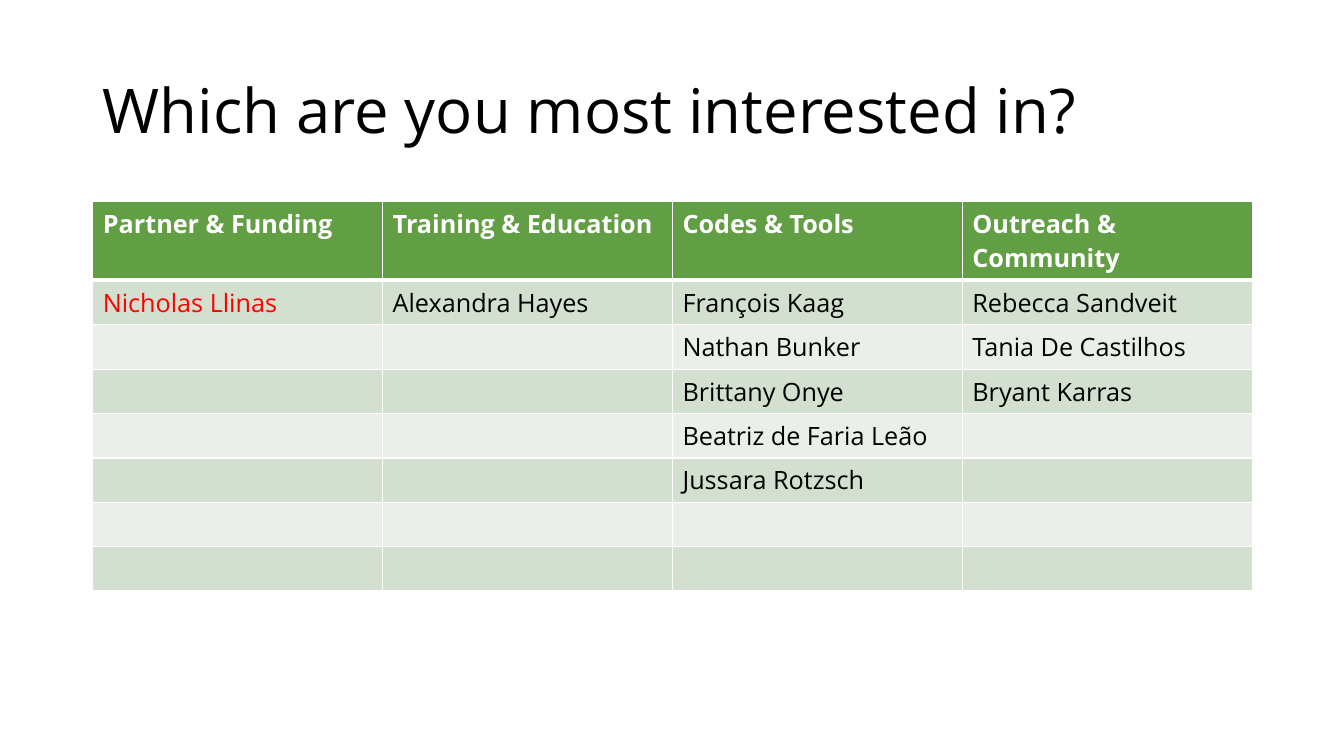
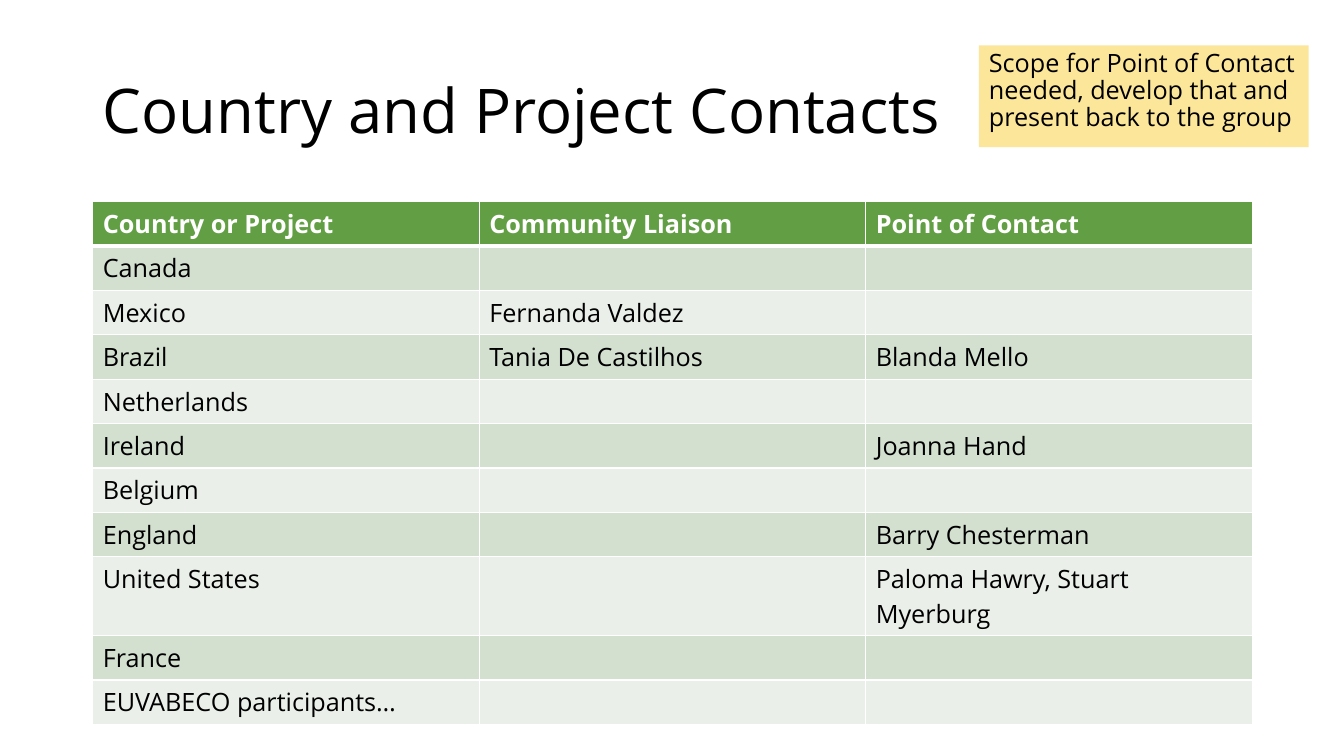
from pptx import Presentation
from pptx.dml.color import RGBColor
from pptx.enum.shapes import MSO_SHAPE
from pptx.enum.text import MSO_ANCHOR, PP_ALIGN
from pptx.oxml.ns import qn
from pptx.util import Inches, Pt
from lxml.etree import SubElement

BLACK = RGBColor(0x00, 0x00, 0x00)
WHITE = RGBColor(0xFF, 0xFF, 0xFF)
RED = RGBColor(0xFF, 0x00, 0x00)
GREEN = RGBColor(0x62, 0x9F, 0x44)
BAND_DARK = RGBColor(0xD3, 0xDF, 0xCF)
BAND_LIGHT = RGBColor(0xEA, 0xF0, 0xE9)
YELLOW = RGBColor(0xFB, 0xE6, 0x9A)

FONT = "Open Sans"
LEFT, WIDTH = 0.92, 11.5
ROW_HEIGHT = 0.44


def write(tf, text, size=18, color=BLACK, bold=False, spacing=None):
    """Put one formatted, left-aligned paragraph into a text frame."""
    p = tf.paragraphs[0]
    p.text = text
    p.alignment = PP_ALIGN.LEFT
    if spacing:
        p.line_spacing = spacing
    for r in p.runs:
        r.font.name = FONT
        r.font.size = Pt(size)
        r.font.bold = bold
        r.font.color.rgb = color


def set_borders(cell, color, bottom=1):
    """Draw 1 pt cell borders, with a bottom border of its own width."""
    tc_pr = cell._tc.get_or_add_tcPr()
    for side, width in (("L", 1), ("R", 1), ("T", 1), ("B", bottom)):
        ln = SubElement(tc_pr, qn(f"a:ln{side}"), w=str(Pt(width)))
        fill = SubElement(ln, qn("a:solidFill"))
        SubElement(fill, qn("a:srgbClr"), val=str(color))


class Deck:
    def __init__(self):
        self.prs = Presentation()
        self.prs.slide_width = Inches(13.33)
        self.prs.slide_height = Inches(7.5)
        self.slide = None

    def add_slide(self, title):
        self.slide = self.prs.slides.add_slide(self.prs.slide_layouts[5])
        sp = self.slide.shapes.title
        sp.left, sp.top = Inches(LEFT), Inches(0.4)
        sp.width, sp.height = Inches(WIDTH), Inches(1.45)
        sp.text_frame.vertical_anchor = MSO_ANCHOR.MIDDLE
        write(sp.text_frame, title, size=44, spacing=0.9)

    def add_table(self, header, rows, highlight=()):
        """Add a banded table; names in highlight are set in red."""
        table = self.slide.shapes.add_table(
            len(rows) + 1, len(header), Inches(LEFT), Inches(2),
            Inches(WIDTH), Inches(ROW_HEIGHT * (len(rows) + 1))).table
        for i, values in enumerate([header, *rows]):
            is_header = i == 0
            band = BAND_DARK if i % 2 else BAND_LIGHT
            for cell, text in zip(table.rows[i].cells, values):
                set_borders(cell, WHITE, bottom=3 if is_header else 1)
                cell.fill.solid()
                cell.fill.fore_color.rgb = GREEN if is_header else band
                if text:
                    color = RED if text in highlight else BLACK
                    write(cell.text_frame, text, bold=is_header,
                          color=WHITE if is_header else color)

    def add_note(self, text, left, top, width, height):
        sp = self.slide.shapes.add_shape(
            MSO_SHAPE.RECTANGLE, Inches(left), Inches(top),
            Inches(width), Inches(height))
        sp.shadow.inherit = False
        sp.fill.solid()
        sp.fill.fore_color.rgb = YELLOW
        sp.line.fill.background()
        tf = sp.text_frame
        tf.word_wrap = False
        tf.vertical_anchor = MSO_ANCHOR.TOP
        write(tf, text, spacing=0.9)


def main():
    deck = Deck()

    # Interest groups
    deck.add_slide("Which are you most interested in?")
    deck.add_table(
        ["Partner & Funding", "Training & Education", "Codes & Tools",
         "Outreach & Community"],
        [["Nicholas Llinas", "Alexandra Hayes", "François Kaag",
          "Rebecca Sandveit"],
         ["", "", "Nathan Bunker", "Tania De Castilhos"],
         ["", "", "Brittany Onye", "Bryant Karras"],
         ["", "", "Beatriz de Faria Leão", ""],
         ["", "", "Jussara Rotzsch", ""],
         [""] * 4,
         [""] * 4],
        highlight=["Nicholas Llinas"])

    # Contacts by country or project
    deck.add_slide("Country and Project Contacts")
    deck.add_table(
        ["Country or Project", "Community Liaison", "Point of Contact"],
        [["Canada", "", ""],
         ["Mexico", "Fernanda Valdez", ""],
         ["Brazil", "Tania De Castilhos", "Blanda Mello"],
         ["Netherlands", "", ""],
         ["Ireland", "", "Joanna Hand"],
         ["Belgium", "", ""],
         ["England", "", "Barry Chesterman"],
         ["United States", "", "Paloma Hawry, Stuart Myerburg"],
         ["France", "", ""],
         ["EUVABECO participants…", "", ""]])
    deck.add_note("Scope for Point of Contact\nneeded, develop that and\n"
                  "present back to the group", 9.71, 0.45, 3.27, 1.01)

    deck.prs.save("out.pptx")


if __name__ == "__main__":
    main()
